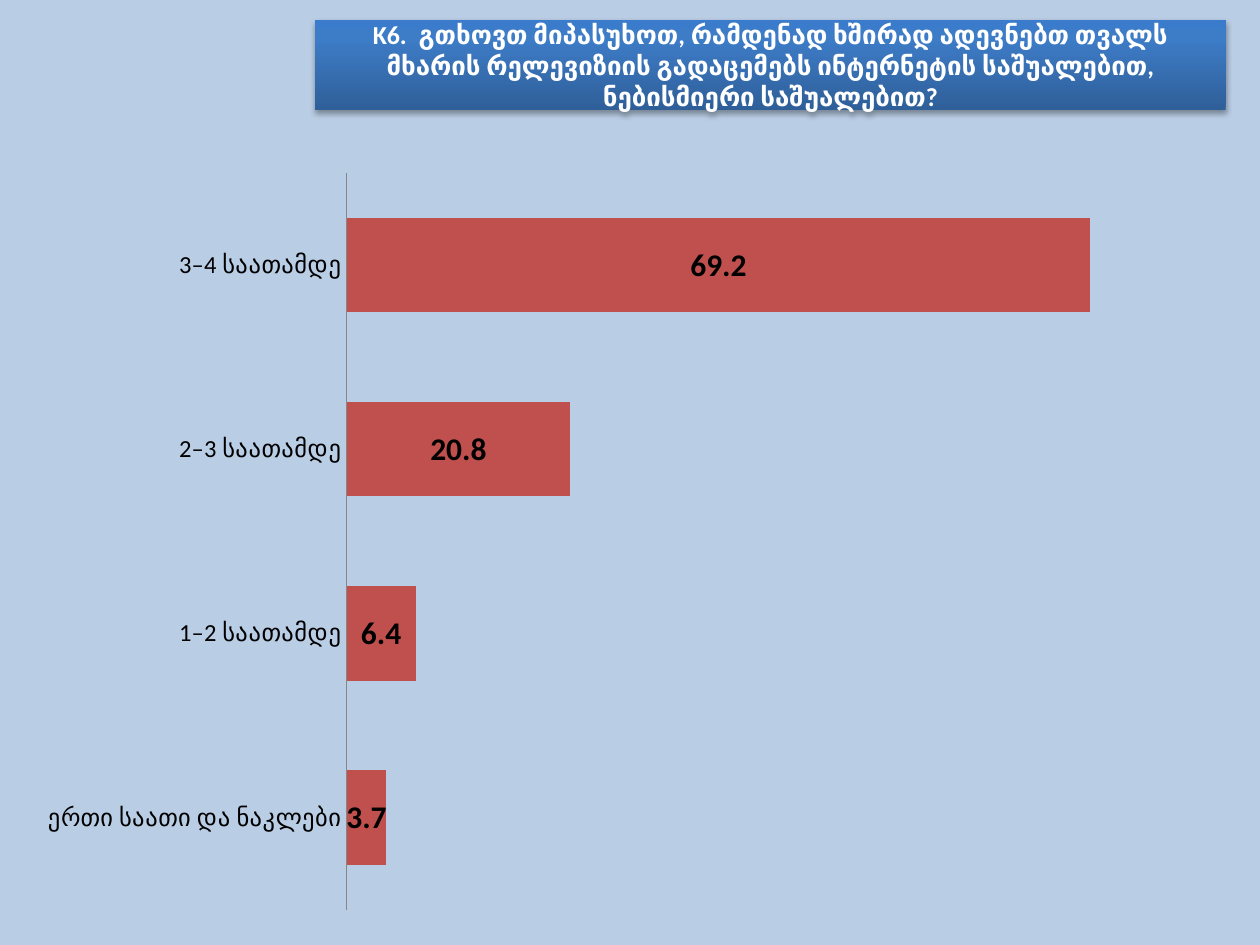
from lxml.etree import fromstring
from pptx import Presentation
from pptx.chart.data import CategoryChartData
from pptx.dml.color import RGBColor
from pptx.enum.chart import XL_CHART_TYPE, XL_LABEL_POSITION, XL_TICK_MARK
from pptx.enum.text import MSO_ANCHOR, MSO_AUTO_SIZE, PP_ALIGN
from pptx.util import Cm, Pt

TITLE = ("K6.  გთხოვთ მიპასუხოთ, რამდენად ხშირად ადევნებთ თვალს მხარის "
         "რელევიზიის გადაცემებს ინტერნეტის საშუალებით, ნებისმიერი საშუალებით?")
HOURS = [("ერთი საათი და ნაკლები", 3.7), ("1–2 საათამდე", 6.4),
         ("2–3 საათამდე", 20.8), ("3–4 საათამდე", 69.2)]
STOPS = [(0, "2F5F99"), (80, "3D7CC7"), (100, "3A7CCB")]
PLOT = {"x": 0.27, "y": 0.02, "w": 0.71, "h": 0.96}
FORMAT = "###0.0"
DRAW = "http://schemas.openxmlformats.org/drawingml/2006/main"
CHART = "http://schemas.openxmlformats.org/drawingml/2006/chart"


def paint(fill, color):
    fill.solid()
    fill.fore_color.rgb = RGBColor.from_string(color)


def style(font, size, color, bold=False):
    font.name, font.size, font.bold = "Calibri", Pt(size), bold
    font.color.rgb = RGBColor.from_string(color)


def add_title(slide):
    title = slide.shapes.title
    title.left, title.top = Cm(6.35), Cm(0.4)
    title.width, title.height = Cm(18.36), Cm(1.82)
    stops = "".join(f'<a:gs pos="{pos * 1000}"><a:srgbClr val="{color}"/></a:gs>'
                    for pos, color in STOPS)
    props = title.element.spPr
    props.append(fromstring(
        f'<a:gradFill xmlns:a="{DRAW}" rotWithShape="1"><a:gsLst>{stops}</a:gsLst>'
        '<a:lin ang="16200000" scaled="0"/></a:gradFill>'))
    props.append(fromstring(
        f'<a:effectLst xmlns:a="{DRAW}"><a:outerShdw blurRad="{Pt(3.1)}" '
        f'dist="{Pt(1.8)}" dir="5400000" rotWithShape="0"><a:srgbClr val="000000">'
        '<a:alpha val="35000"/></a:srgbClr></a:outerShdw></a:effectLst>'))
    frame = title.text_frame
    frame.word_wrap, frame.auto_size = True, MSO_AUTO_SIZE.NONE
    frame.vertical_anchor = MSO_ANCHOR.MIDDLE
    para = frame.paragraphs[0]
    para.alignment = PP_ALIGN.CENTER
    run = para.add_run()
    run.text = TITLE
    style(run.font, 14.8, "FFFFFF", True)


def add_bars(slide):
    data = CategoryChartData(number_format=FORMAT)
    data.categories = [name for name, _ in HOURS]
    data.add_series("Series 1", [value for _, value in HOURS])
    chart = slide.shapes.add_chart(XL_CHART_TYPE.BAR_STACKED, Cm(0.4), Cm(3.18),
                                   Cm(24.41), Cm(15.47), data).chart
    chart.has_legend = chart.has_title = False
    style(chart.font, 18, "000000")
    axis = chart.category_axis
    axis.major_tick_mark = axis.minor_tick_mark = XL_TICK_MARK.NONE
    axis.has_major_gridlines = False
    style(axis.tick_labels.font, 14, "000000")
    paint(axis.format.line.fill, "868686")
    scale = chart.value_axis
    scale.visible = scale.has_major_gridlines = False
    scale.minimum_scale, scale.maximum_scale = 0, 80
    scale.tick_labels.number_format = FORMAT
    plot = chart.plots[0]
    plot.gap_width, plot.overlap, plot.vary_by_categories = 95, 100, False
    bars = plot.series[0]
    paint(bars.format.fill, "C0504D")
    labels = bars.data_labels
    labels.show_value = True
    labels.number_format, labels.number_format_is_linked = FORMAT, False
    labels.position = XL_LABEL_POSITION.CENTER
    style(labels.font, 18, "000000", True)
    area = chart.element.chart.plotArea
    for old in area.findall(f"{{{CHART}}}layout"):
        area.remove(old)
    sizes = "".join(f'<c:{key} val="{size}"/>' for key, size in PLOT.items())
    area.insert(0, fromstring(
        f'<c:layout xmlns:c="{CHART}"><c:manualLayout><c:layoutTarget val="inner"/>'
        f'<c:xMode val="edge"/><c:yMode val="edge"/>{sizes}'
        '</c:manualLayout></c:layout>'))


def main():
    """Build the slide on how often viewers watch online."""
    deck = Presentation()
    deck.slide_width, deck.slide_height = Cm(25.4), Cm(19.05)
    slide = deck.slides.add_slide(deck.slide_layouts[5])
    paint(slide.background.fill, "B9CDE5")
    add_bars(slide)
    add_title(slide)
    deck.save("out.pptx")


if __name__ == "__main__":
    main()
